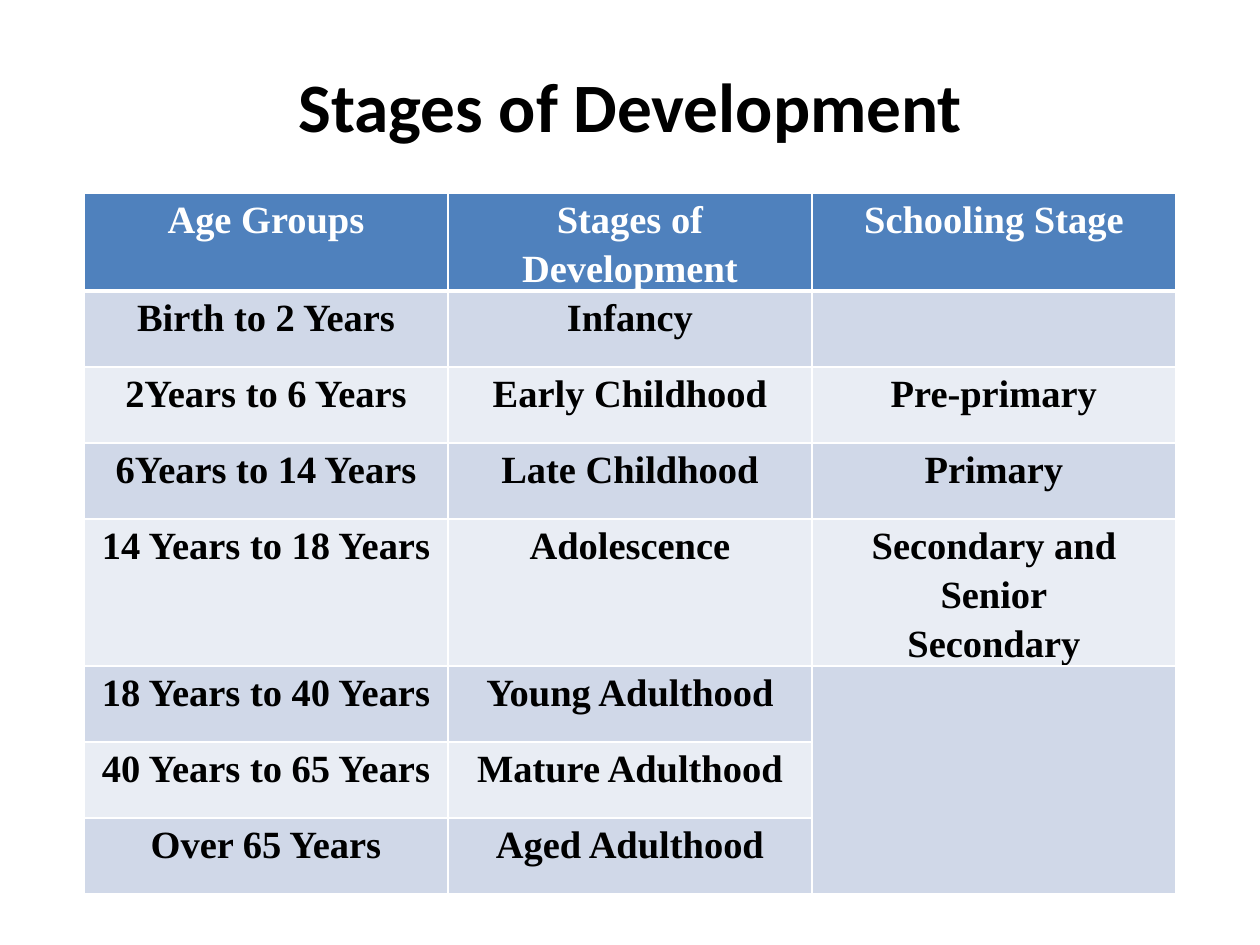
from dataclasses import dataclass

from lxml.etree import SubElement
from pptx import Presentation
from pptx.dml.color import RGBColor
from pptx.enum.text import MSO_ANCHOR, PP_ALIGN
from pptx.oxml.ns import qn
from pptx.util import Emu, Pt

PX_PER_INCH = 126


@dataclass(frozen=True)
class Theme:
    title_font: str = "Calibri"
    table_font: str = "Times New Roman"
    title_size: float = 39.6
    table_size: float = 22
    line_spacing: float = 1.15
    ink: str = "000000"
    white: str = "FFFFFF"
    header: str = "4F81BD"
    bands: tuple[str, str] = ("D0D8E8", "E9EDF4")
    rule: float = 1
    header_rule: float = 3


@dataclass(frozen=True)
class Stage:
    ages: str
    name: str
    schooling: tuple[str, ...] = ()
    height: int = 76


THEME = Theme()
HEADINGS = ("Age Groups", "Stages of Development", "Schooling Stage")
STAGES = (
    Stage("Birth to 2 Years", "Infancy"),
    Stage("2Years to 6 Years", "Early Childhood", ("Pre-primary",)),
    Stage("6Years to 14 Years", "Late Childhood", ("Primary",)),
    Stage("14 Years to 18 Years", "Adolescence",
          ("Secondary and Senior", "Secondary"), 101),
    Stage("18 Years to 40 Years", "Young Adulthood"),
    Stage("40 Years to 65 Years", "Mature Adulthood"),
    Stage("Over 65 Years", "Aged Adulthood"),
)
HEADER_HEIGHT = 76
COLUMN_WIDTH = 364
FIRST_ADULT_ROW = 5


def px(n: int) -> Emu:
    return Emu(round(n * 914400 / PX_PER_INCH))


def add_run(p, text: str, font: str, size: float, color: str) -> None:
    p.alignment = PP_ALIGN.CENTER
    r = p.add_run()
    r.text = text
    r.font.name = font
    r.font.size = Pt(size)
    r.font.bold = True
    r.font.color.rgb = RGBColor.from_string(color)


def set_borders(cell, top: float, bottom: float) -> None:
    tc_pr = cell._tc.get_or_add_tcPr()
    widths = {"a:lnL": THEME.rule, "a:lnR": THEME.rule,
              "a:lnT": top, "a:lnB": bottom}
    for tag, width in widths.items():
        ln = SubElement(tc_pr, qn(tag), w=str(Pt(width)))
        fill = SubElement(ln, qn("a:solidFill"))
        SubElement(fill, qn("a:srgbClr"), val=THEME.white)


def fill_cell(cell, lines: tuple[str, ...], row: int) -> None:
    is_header = row == 0
    set_borders(cell,
                top=THEME.header_rule if row == 1 else THEME.rule,
                bottom=THEME.header_rule if is_header else THEME.rule)
    cell.fill.solid()
    cell.fill.fore_color.rgb = RGBColor.from_string(
        THEME.header if is_header else THEME.bands[(row - 1) % 2])
    cell.margin_left = cell.margin_right = px(9)
    cell.margin_top = cell.margin_bottom = 0
    tf = cell.text_frame
    for i, line in enumerate(lines):
        p = tf.add_paragraph() if i else tf.paragraphs[0]
        p.line_spacing = THEME.line_spacing
        add_run(p, line, THEME.table_font, THEME.table_size,
                THEME.white if is_header else THEME.ink)


def add_title(s, text: str) -> None:
    sp = s.shapes.title
    sp.left, sp.top, sp.width, sp.height = px(95), px(42), px(1071), px(126)
    tf = sp.text_frame
    tf.word_wrap = True
    tf.vertical_anchor = MSO_ANCHOR.MIDDLE
    add_run(tf.paragraphs[0], text, THEME.title_font, THEME.title_size, THEME.ink)


def add_stage_table(s) -> None:
    rows = [tuple((heading,) for heading in HEADINGS)]
    rows += [((st.ages,), (st.name,), st.schooling) for st in STAGES]
    heights = [HEADER_HEIGHT] + [st.height for st in STAGES]
    frame = s.shapes.add_table(
        len(rows), len(HEADINGS), px(84), px(193),
        px(COLUMN_WIDTH * len(HEADINGS)), px(sum(heights)))
    table = frame.table
    for column in table.columns:
        column.width = px(COLUMN_WIDTH)
    for i, (texts, height) in enumerate(zip(rows, heights)):
        table.rows[i].height = px(height)
        for j, lines in enumerate(texts):
            fill_cell(table.cell(i, j), lines, i)
    # Adult stages share one empty schooling cell
    last = len(HEADINGS) - 1
    table.cell(FIRST_ADULT_ROW, last).merge(table.cell(len(rows) - 1, last))


def main() -> None:
    prs = Presentation()
    prs.slide_width, prs.slide_height = px(1260), px(945)
    s = prs.slides.add_slide(prs.slide_layouts[5])
    # Title
    add_title(s, "Stages of Development")
    # Table of ages, stages and schooling
    add_stage_table(s)
    prs.save("out.pptx")


if __name__ == "__main__":
    main()
